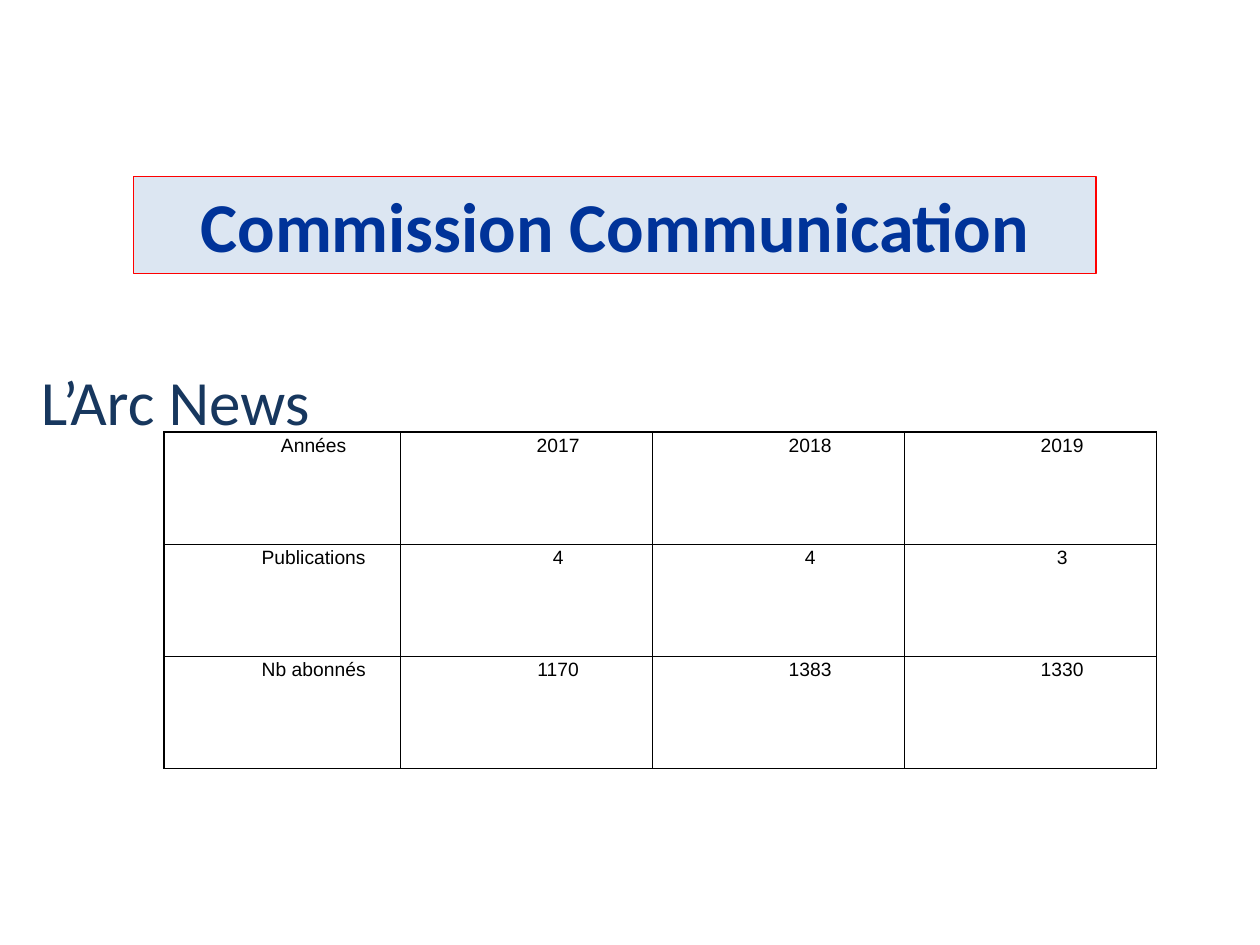
from dataclasses import dataclass

import pptx
import pptx.dml.color
import pptx.enum.shapes
import pptx.enum.text
import pptx.oxml
import pptx.oxml.ns
import pptx.util
from pptx.util import Inches

CENTER = pptx.enum.text.PP_ALIGN.CENTER
BORDER_SIDES = ("a:lnL", "a:lnR", "a:lnT", "a:lnB")


@dataclass(frozen=True)
class TextStyle:
    font: str
    size: float
    color: str
    bold: bool = False


TITLE = TextStyle("Calibri", 40, "003399", bold=True)
SUBTITLE = TextStyle("Calibri", 36, "17375E")
CELL = TextStyle("Arial", 11, "000000")

COLUMN_WIDTHS = (1.88, 2, 2, 2)
ROW_HEIGHT = 0.89
ROWS = (
    ("Années", "2017", "2018", "2019"),
    ("Publications", "4", "4", "3"),
    ("Nb abonnés", "1170", "1383", "1330"),
)


def rgb(color: str) -> pptx.dml.color.RGBColor:
    return pptx.dml.color.RGBColor.from_string(color)


def write(para, text: str, style: TextStyle) -> None:
    para.alignment = CENTER
    span = para.add_run()
    span.text = text
    span.font.name = style.font
    span.font.size = pptx.util.Pt(style.size)
    span.font.bold = style.bold
    span.font.color.rgb = rgb(style.color)


def add_borders(cell, color: str, points: float) -> None:
    properties = cell._tc.get_or_add_tcPr()
    for position, side in enumerate(BORDER_SIDES):
        line = pptx.oxml.parse_xml(
            f'<{side} {pptx.oxml.ns.nsdecls("a")} w="{pptx.util.Pt(points)}">'
            f'<a:solidFill><a:srgbClr val="{color}"/></a:solidFill></{side}>'
        )
        properties.insert(position, line)


def fill_cell(cell, text: str) -> None:
    cell.margin_left = cell.margin_right = Inches(0.07)
    cell.margin_top = cell.margin_bottom = 0
    cell.fill.background()
    add_borders(cell, "000000", 1)
    para = cell.text_frame.paragraphs[0]
    para.line_spacing = 1.15
    para._p.get_or_add_pPr().set("marL", str(Inches(0.5)))
    write(para, text, CELL)


def add_subtitle(slide) -> None:
    box = slide.shapes.add_textbox(Inches(-0.2), Inches(2.41), Inches(3.07), Inches(0.95))
    frame = box.text_frame
    frame.word_wrap = True
    frame.margin_left, frame.margin_top = Inches(0.21), Inches(0.47)
    write(frame.paragraphs[0], "L’Arc News", SUBTITLE)


def add_title(slide) -> None:
    banner = slide.shapes.add_shape(
        pptx.enum.shapes.MSO_SHAPE.RECTANGLE,
        Inches(1.06), Inches(1.4), Inches(7.64), Inches(0.77),
    )
    banner.shadow.inherit = False
    banner.fill.solid()
    banner.fill.fore_color.rgb = rgb("DCE6F2")
    banner.line.color.rgb = rgb("FF0000")
    banner.line.width = pptx.util.Pt(0.75)
    frame = banner.text_frame
    frame.word_wrap = True
    frame.vertical_anchor = pptx.enum.text.MSO_ANCHOR.MIDDLE
    write(frame.paragraphs[0], "Commission Communication", TITLE)


def add_figures(slide) -> None:
    table = slide.shapes.add_table(
        len(ROWS), len(COLUMN_WIDTHS), Inches(1.3), Inches(3.43),
        Inches(sum(COLUMN_WIDTHS)), Inches(ROW_HEIGHT * len(ROWS)),
    ).table
    table.first_row = table.horz_banding = False
    for column, width in zip(table.columns, COLUMN_WIDTHS):
        column.width = Inches(width)
    for row, texts in zip(table.rows, ROWS):
        row.height = Inches(ROW_HEIGHT)
        for cell, text in zip(row.cells, texts):
            fill_cell(cell, text)


def main() -> None:
    deck = pptx.Presentation()
    deck.slide_width, deck.slide_height = Inches(10), Inches(7.5)
    slide = deck.slides.add_slide(deck.slide_layouts[6])

    # Headings
    add_subtitle(slide)
    add_title(slide)

    # Newsletter figures by year
    add_figures(slide)

    deck.save("out.pptx")


if __name__ == "__main__":
    main()
